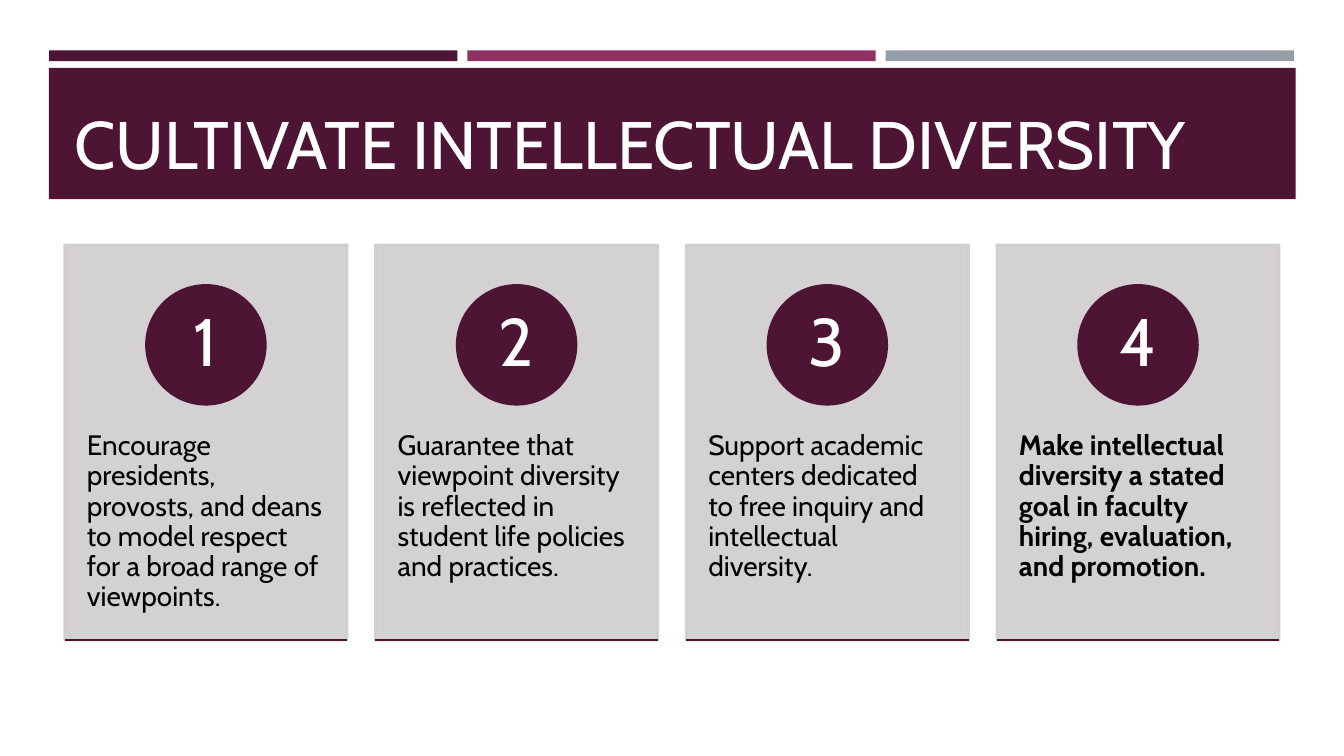
from lxml import etree
from pptx import Presentation
from pptx.dml.color import RGBColor
from pptx.enum.shapes import MSO_CONNECTOR, MSO_SHAPE
from pptx.enum.text import MSO_ANCHOR, MSO_AUTO_SIZE, PP_ALIGN
from pptx.oxml.ns import qn
from pptx.util import Cm, Pt

RECT, OVAL, LINE = MSO_SHAPE.RECTANGLE, MSO_SHAPE.OVAL, MSO_CONNECTOR.STRAIGHT
TOP, MIDDLE, BOTTOM = MSO_ANCHOR.TOP, MSO_ANCHOR.MIDDLE, MSO_ANCHOR.BOTTOM
LEFT, CENTER = PP_ALIGN.LEFT, PP_ALIGN.CENTER

PLUM = RGBColor(0x4D, 0x14, 0x34)
MAGENTA = RGBColor(0x90, 0x31, 0x63)
STEEL = RGBColor(0x96, 0x9F, 0xA7)
CARD_GRAY = RGBColor(0xD0, 0xCC, 0xCE)
WHITE = RGBColor(0xFF, 0xFF, 0xFF)
BLACK = RGBColor(0, 0, 0)

TITLE = "CULTIVATE INTELLECTUAL DIVERSITY"
STRIPES = [PLUM, MAGENTA, STEEL]
CARDS = [
    ("Encourage presidents, provosts, and deans to model respect for a broad range of viewpoints.", False),
    ("Guarantee that viewpoint diversity is reflected in student life policies and practices.", False),
    ("Support academic centers dedicated to free inquiry and intellectual diversity.", False),
    ("Make intellectual diversity a stated goal in faculty hiring, evaluation, and promotion.", True),
]

STRIPE_X, STRIPE_Y, STRIPE_W, STRIPE_H, STRIPE_STEP = 1.24, 1.27, 10.29, 0.27, 10.54
CARD_X, CARD_Y, CARD_W, CARD_H, CARD_STEP = 1.63, 6.17, 7.12, 9.96, 7.83
TEXT_Y, TEXT_H = 9.96, 5.97
CIRCLE_Y, CIRCLE_D = 7.19, 3.0
LINE_W = Pt(1.75)

TITLE_FORMAT = {"size": Pt(48), "name": "Cabin", "bold": False}
BODY_FORMAT = {"size": Pt(20), "name": "Cabin"}


def add_block(s, kind, box, color, outlined=False):
    """Add a solid shape, with an outline of the same colour if asked."""
    sp = s.shapes.add_shape(kind, *map(Cm, box))
    sp.shadow.inherit = False
    sp.fill.solid()
    sp.fill.fore_color.rgb = color
    if outlined:
        sp.line.color.rgb = color
        sp.line.width = LINE_W
    else:
        sp.line.fill.background()
    return sp


def write(sp, text, formats, color, align, anchor, margins, spacing=0.9):
    """Put one formatted paragraph into a shape."""
    tf = sp.text_frame
    tf.word_wrap = True
    tf.auto_size = MSO_AUTO_SIZE.NONE
    tf.vertical_anchor = anchor
    tf.margin_left = tf.margin_right = Cm(margins[0])
    tf.margin_top = tf.margin_bottom = Cm(margins[1])
    p = tf.paragraphs[0]
    p.alignment = align
    p.line_spacing = spacing
    r = p.add_run()
    r.text = text
    r.font.color.rgb = color
    for name, value in formats.items():
        setattr(r.font, name, value)


def add_card(s, i, text, bold):
    """Add one numbered card with its base line."""
    x = CARD_X + i * CARD_STEP
    card = add_block(s, RECT, (x, CARD_Y, CARD_W, CARD_H), CARD_GRAY, True)
    for clr in card.element.spPr.iter(qn("a:srgbClr")):
        etree.SubElement(clr, qn("a:alpha")).set("val", "90000")

    body = s.shapes.add_textbox(*map(Cm, (x, TEXT_Y, CARD_W, TEXT_H)))
    write(body, text, {**BODY_FORMAT, "bold": bold}, BLACK, LEFT, TOP, (0.56, 0.91))

    circle_x = x + (CARD_W - CIRCLE_D) / 2
    circle = add_block(s, OVAL, (circle_x, CIRCLE_Y, CIRCLE_D, CIRCLE_D), PLUM, True)
    write(circle, str(i + 1), TITLE_FORMAT, WHITE, CENTER, MIDDLE, (0.23, 0.03))

    base_y = CARD_Y + CARD_H
    base = s.shapes.add_connector(LINE, *map(Cm, (x, base_y, x + CARD_W, base_y)))
    base.line.color.rgb = PLUM
    base.line.width = LINE_W
    etree.SubElement(base.element.spPr, qn("a:effectLst"))


def main():
    """Build the slide and save it."""
    prs = Presentation()
    prs.slide_width, prs.slide_height = Cm(33.87), Cm(19.05)
    s = prs.slides.add_slide(prs.slide_layouts[5])

    for i, color in enumerate(STRIPES):
        add_block(s, RECT, (STRIPE_X + i * STRIPE_STEP, STRIPE_Y, STRIPE_W, STRIPE_H), color)
    banner = add_block(s, RECT, (1.23, 1.71, 31.42, 3.31), PLUM)

    title = s.shapes.title
    title.left, title.top, title.width, title.height = map(Cm, (1.63, 1.96, 30.63, 2.82))
    write(title, TITLE, TITLE_FORMAT, WHITE, LEFT, BOTTOM, (0.25, 0.13), 0.9)
    banner.element.addnext(title.element)

    for i, (text, bold) in enumerate(CARDS):
        add_card(s, i, text, bold)
    prs.save("out.pptx")


if __name__ == "__main__":
    main()
